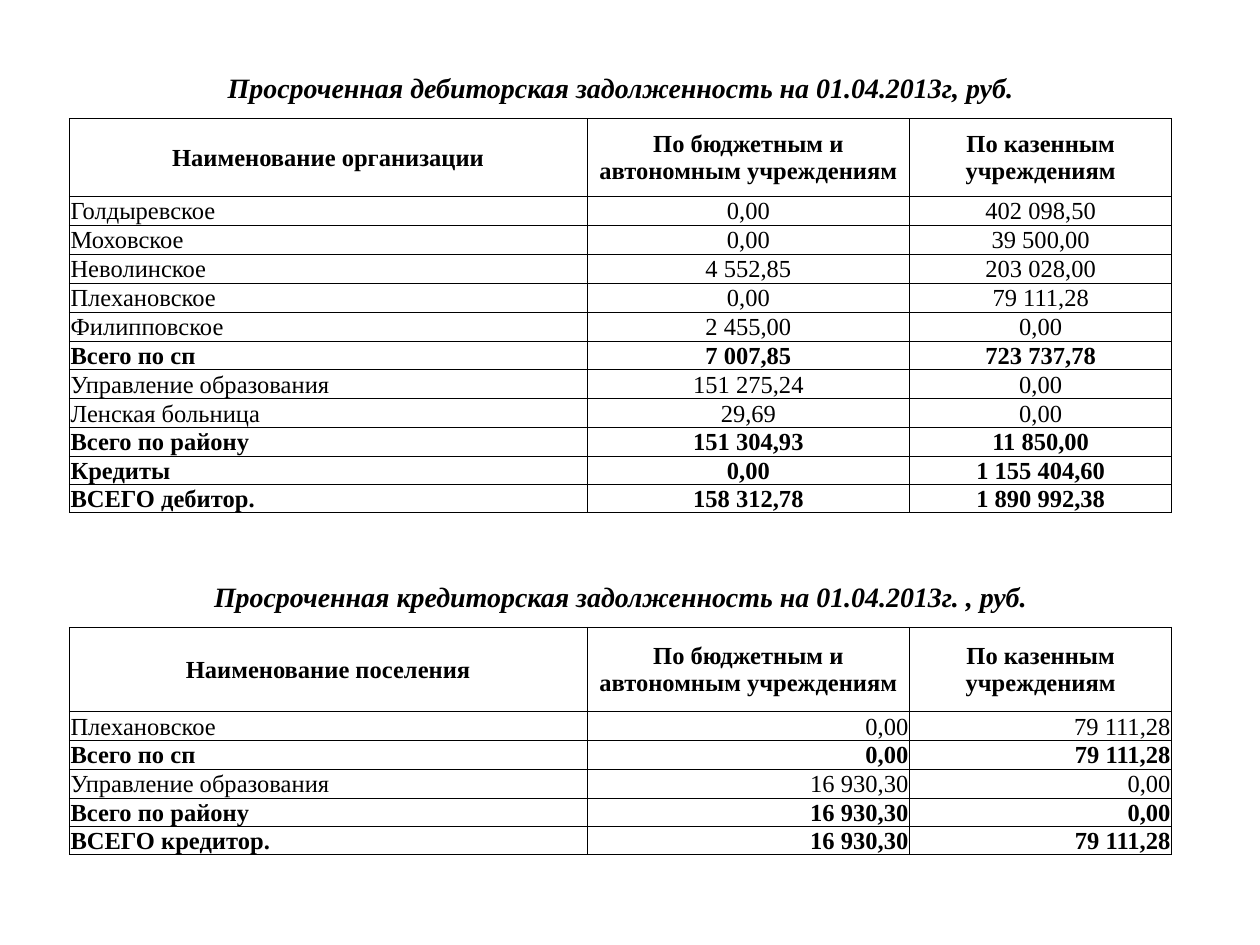
import pptx
import pptx.dml.color
import pptx.enum.text
import pptx.oxml
import pptx.oxml.ns
import pptx.util
from dataclasses import dataclass

Inches = pptx.util.Inches
Pt = pptx.util.Pt
Align = pptx.enum.text.PP_ALIGN


@dataclass(frozen=True)
class Theme:
    font: str = "Times New Roman"
    ink: str = "000000"
    paper: str = "FFFFFF"
    title_size: int = 16
    text_size: int = 14
    gap_size: int = 10
    border: float = 0.5


theme = Theme()
NO_STYLE = "{2D5ABB26-0587-4C30-8999-92F81FD0307C}"
COLUMN_WIDTHS = [4.11, 2.56, 2.08]
TITLE_HEIGHT, PLAIN_HEIGHT, TOTAL_HEIGHT, GAP_HEIGHT = 0.47, 0.23, 0.22, 0.22
GAP_ROWS = 2
AMOUNT_HEADERS = ["По бюджетным и автономным учреждениям", "По казенным учреждениям"]

# Title, first header, header height, amount alignment, rows (name, amounts, is total)
sections = [
    ("Просроченная дебиторская задолженность на 01.04.2013г, руб.",
     "Наименование организации", 0.62, Align.CENTER, [
         ("Голдыревское", "0,00", "402 098,50", False),
         ("Моховское", "0,00", "39 500,00", False),
         ("Неволинское", "4 552,85", "203 028,00", False),
         ("Плехановское", "0,00", "79 111,28", False),
         ("Филипповское", "2 455,00", "0,00", False),
         ("Всего по сп", "7 007,85", "723 737,78", True),
         ("Управление образования", "151 275,24", "0,00", False),
         ("Ленская больница", "29,69", "0,00", False),
         ("Всего по району", "151 304,93", "11 850,00", True),
         ("Кредиты", "0,00", "1 155 404,60", True),
         ("ВСЕГО дебитор.", "158 312,78", "1 890 992,38", True),
     ]),
    ("Просроченная кредиторская задолженность на 01.04.2013г. , руб.",
     "Наименование поселения", 0.67, Align.RIGHT, [
         ("Плехановское", "0,00", "79 111,28", False),
         ("Всего по сп", "0,00", "79 111,28", True),
         ("Управление образования", "16 930,30", "0,00", False),
         ("Всего по району", "16 930,30", "0,00", True),
         ("ВСЕГО кредитор.", "16 930,30", "79 111,28", True),
     ]),
]


def write_cell(cell, text, align, size=theme.text_size, bold=False, italic=False):
    para = cell.text_frame.paragraphs[0]
    para.alignment = align
    span = para.add_run()
    span.text = text
    span.font.name = theme.font
    span.font.size = Pt(size)
    span.font.bold = bold
    span.font.italic = italic
    span.font.color.rgb = pptx.dml.color.RGBColor.from_string(theme.ink)


def draw_borders(cell, sides):
    properties = cell._tc.get_or_add_tcPr()
    for position, side in enumerate(sides):
        line = pptx.oxml.parse_xml(
            f'<a:ln{side} {pptx.oxml.ns.nsdecls("a")} w="{Pt(theme.border)}">'
            f'<a:solidFill><a:srgbClr val="{theme.ink}"/></a:solidFill></a:ln{side}>')
        properties.insert(position, line)


deck = pptx.Presentation()
deck.slide_width, deck.slide_height = Inches(10), Inches(7.5)
page = deck.slides.add_slide(deck.slide_layouts[6])

row_count = sum(2 + len(section[-1]) for section in sections) + GAP_ROWS
frame = page.shapes.add_table(row_count, len(COLUMN_WIDTHS), Inches(0.55), Inches(0.47),
                              Inches(sum(COLUMN_WIDTHS)), Inches(6.3))
table = frame.table
table.first_row = table.horz_banding = False
table._tbl.tblPr.find(pptx.oxml.ns.qn("a:tableStyleId")).text = NO_STYLE
for column, width in zip(table.columns, COLUMN_WIDTHS):
    column.width = Inches(width)

for cell in table.iter_cells():
    cell.fill.solid()
    cell.fill.fore_color.rgb = pptx.dml.color.RGBColor.from_string(theme.paper)
    cell.margin_left = cell.margin_right = cell.margin_top = Inches(0.01)
    cell.margin_bottom = 0
    cell.vertical_anchor = pptx.enum.text.MSO_ANCHOR.MIDDLE

row = 0
for title, name_header, header_height, amount_align, records in sections:
    # Empty rows keep the second section apart from the first
    if row:
        for gap_row in range(row, row + GAP_ROWS):
            table.rows[gap_row].height = Inches(GAP_HEIGHT)
            for cell in table.rows[gap_row].cells:
                cell.text_frame.paragraphs[0]._p.append(pptx.oxml.parse_xml(
                    f'<a:endParaRPr {pptx.oxml.ns.nsdecls("a")} sz="{theme.gap_size * 100}"/>'))
        row += GAP_ROWS

    table.rows[row].height = Inches(TITLE_HEIGHT)
    table.cell(row, 0).merge(table.cell(row, len(COLUMN_WIDTHS) - 1))
    write_cell(table.cell(row, 0), title, Align.CENTER, theme.title_size, True, True)
    for cell in table.rows[row].cells:
        draw_borders(cell, "B")

    row += 1
    table.rows[row].height = Inches(header_height)
    for cell, text in zip(table.rows[row].cells, [name_header, *AMOUNT_HEADERS]):
        write_cell(cell, text, Align.CENTER, bold=True)
        draw_borders(cell, "LRTB")

    row += 1
    for *texts, is_total in records:
        table.rows[row].height = Inches(TOTAL_HEIGHT if is_total else PLAIN_HEIGHT)
        aligns = [Align.LEFT, amount_align, amount_align]
        for cell, text, align in zip(table.rows[row].cells, texts, aligns):
            write_cell(cell, text, align, bold=is_total)
            draw_borders(cell, "LRTB")
        row += 1

deck.save("out.pptx")
